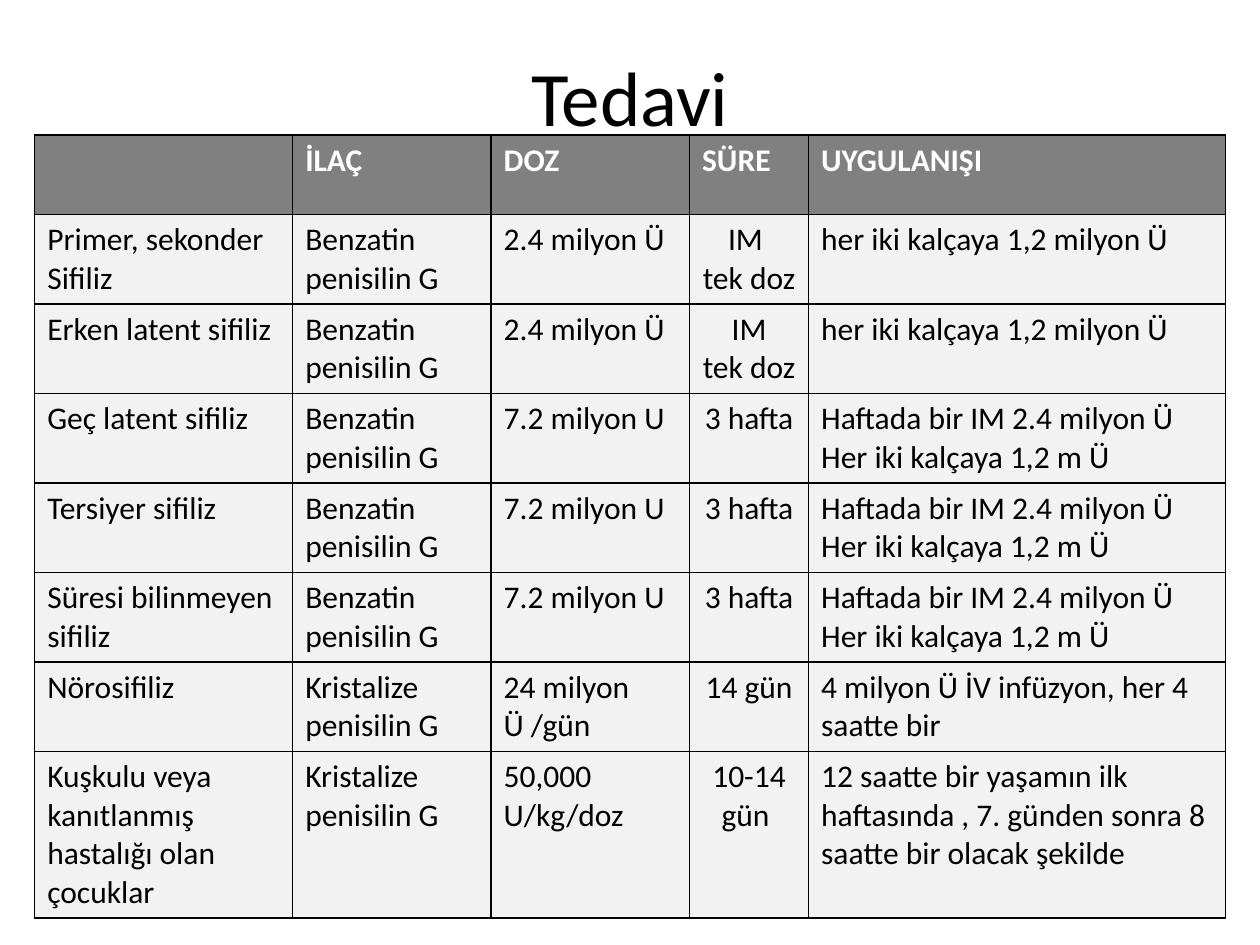
from dataclasses import dataclass

import lxml.etree
import pptx
import pptx.dml.color
import pptx.enum.text
import pptx.oxml.ns
import pptx.util

Cm = pptx.util.Cm
Pt = pptx.util.Pt
ALIGN = pptx.enum.text.PP_ALIGN
ANCHOR = pptx.enum.text.MSO_ANCHOR

BLACK, WHITE, HEADER_GREY, ROW_GREY = "000000", "FFFFFF", "808080", "F2F2F2"
COLUMN_WIDTHS = (5.2, 4, 4, 2.4, 8.4)
HEADER_HEIGHT, ROW_HEIGHT = 1.6, 1.7
DURATION_COLUMN = 3
HEADINGS = ("", "İLAÇ", "DOZ", "SÜRE", "UYGULANIŞI")


@dataclass
class Treatment:
    stage: str
    drug: str
    dose: str
    duration: str
    administration: str

    def texts(self) -> tuple[str, ...]:
        return (self.stage, self.drug, self.dose, self.duration, self.administration)


BENZATHINE = "Benzatin penisilin G"
CRYSTALLINE = "Kristalize penisilin G"
BOTH_HIPS = "her iki kalçaya 1,2 milyon Ü"
WEEKLY = "Haftada bir IM 2.4 milyon Ü Her iki kalçaya 1,2 m Ü"

TREATMENTS = (
    Treatment("Primer, sekonder Sifiliz", BENZATHINE, "2.4 milyon Ü", "IM \ntek doz ", BOTH_HIPS),
    Treatment("Erken latent sifiliz", BENZATHINE, "2.4 milyon Ü", "IM\ntek doz ", BOTH_HIPS),
    *(
        Treatment(stage, BENZATHINE, "7.2 milyon U", "3 hafta", WEEKLY)
        for stage in ("Geç latent sifiliz", "Tersiyer sifiliz", "Süresi bilinmeyen sifiliz")
    ),
    Treatment("Nörosifiliz", CRYSTALLINE, "24 milyon Ü /gün", "14 gün",
              "4 milyon Ü İV infüzyon, her 4 saatte bir"),
    Treatment("Kuşkulu veya kanıtlanmış hastalığı olan çocuklar", CRYSTALLINE,
              "50,000\nU/kg/doz", "10-14 gün ",
              "12 saatte bir yaşamın ilk haftasında , 7. günden sonra 8 saatte bir olacak şekilde"),
)


def rgb(value: str) -> pptx.dml.color.RGBColor:
    return pptx.dml.color.RGBColor.from_string(value)


def apply(target: object, values: dict) -> None:
    for name, value in values.items():
        setattr(target, name, value)


def write(frame: pptx.text.text.TextFrame, text: str, size: int, color: str,
          bold: bool, alignment: ALIGN) -> None:
    frame.text = text
    for paragraph in frame.paragraphs:
        paragraph.alignment = alignment
        apply(paragraph.font, {"name": "Calibri", "size": Pt(size), "bold": bold})
        paragraph.font.color.rgb = rgb(color)


def add_borders(cell: pptx.table._Cell) -> None:
    qn = pptx.oxml.ns.qn
    properties = cell._tc.get_or_add_tcPr()
    for position, side in enumerate(("lnL", "lnR", "lnT", "lnB")):
        line = lxml.etree.Element(qn(f"a:{side}"), w=str(Pt(1)))
        fill = lxml.etree.SubElement(line, qn("a:solidFill"))
        lxml.etree.SubElement(fill, qn("a:srgbClr"), val=BLACK)
        properties.insert(position, line)


def draw_row(table: pptx.table.Table, index: int, texts: tuple[str, ...]) -> None:
    is_header = index == 0
    table.rows[index].height = Cm(HEADER_HEIGHT if is_header else ROW_HEIGHT)
    for column, text in enumerate(texts):
        cell = table.cell(index, column)
        centred = column == DURATION_COLUMN and not is_header
        write(cell.text_frame, text, 18, WHITE if is_header else BLACK, is_header,
              ALIGN.CENTER if centred else ALIGN.LEFT)
        cell.fill.solid()
        cell.fill.fore_color.rgb = rgb(HEADER_GREY if is_header else ROW_GREY)
        add_borders(cell)


def main() -> None:
    presentation = pptx.Presentation()
    apply(presentation, {"slide_width": Cm(25.4), "slide_height": Cm(19.05)})
    slide = presentation.slides.add_slide(presentation.slide_layouts[5])

    heading = slide.shapes.title
    apply(heading, {"left": Cm(1.27), "top": Cm(0.76), "width": Cm(22.86), "height": Cm(1.96)})
    write(heading.text_frame, "Tedavi", 44, BLACK, False, ALIGN.CENTER)
    apply(heading.text_frame, {
        "auto_size": pptx.enum.text.MSO_AUTO_SIZE.NONE,
        "vertical_anchor": ANCHOR.TOP,
        "margin_top": Cm(0.23),
        "margin_bottom": Cm(0),
    })

    table = slide.shapes.add_table(
        len(TREATMENTS) + 1, len(HEADINGS), Cm(0.7), Cm(2.72),
        Cm(sum(COLUMN_WIDTHS)), Cm(HEADER_HEIGHT + ROW_HEIGHT * len(TREATMENTS)),
    ).table
    for column, width in zip(table.columns, COLUMN_WIDTHS):
        column.width = Cm(width)
    rows = (HEADINGS, *(treatment.texts() for treatment in TREATMENTS))
    for index, texts in enumerate(rows):
        draw_row(table, index, texts)

    presentation.save("out.pptx")


if __name__ == "__main__":
    main()
